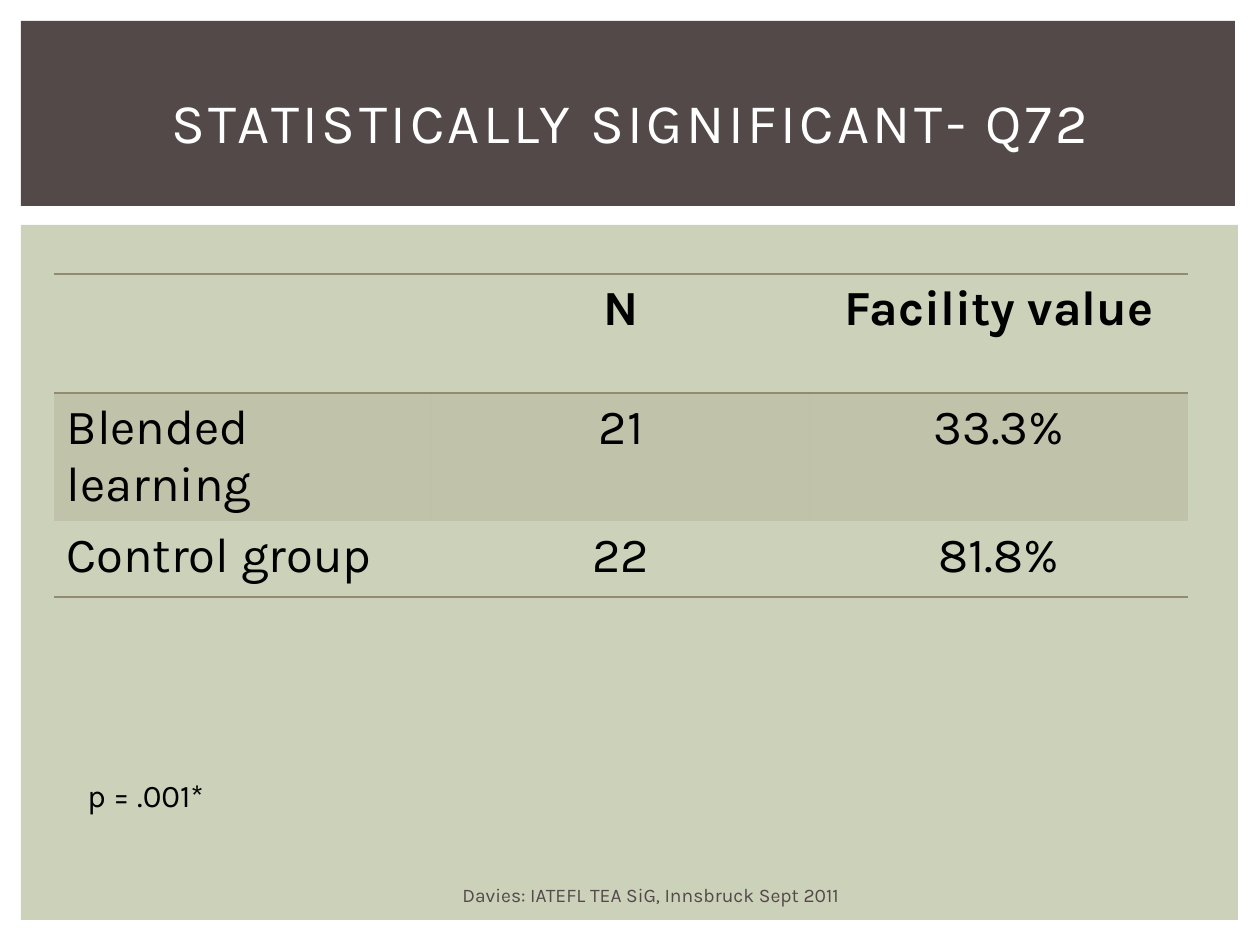
from lxml.etree import SubElement
from pptx import Presentation
from pptx.dml.color import RGBColor
from pptx.enum.shapes import MSO_SHAPE as Shape
from pptx.enum.text import MSO_ANCHOR as Anchor, MSO_AUTO_SIZE as AutoSize, PP_ALIGN as Align
from pptx.oxml.ns import qn
from pptx.util import Emu, Pt

PX = 914400 // 126
FONT = "Karla"
SAGE = RGBColor(0xCC, 0xD1, 0xB9)
BROWN = RGBColor(0x53, 0x49, 0x49)
OLIVE = RGBColor(0x92, 0x8B, 0x70)
WHITE = RGBColor(0xFF, 0xFF, 0xFF)
BLACK = RGBColor(0, 0, 0)
NO_STYLE = "{2D5ABB26-0587-4C30-8999-92F81FD0307C}"
RESULTS = [
    ("", "N", "Facility value"),
    ("Blended learning", "21", "33.3%"),
    ("Control group", "22", "81.8%"),
]
ROW_HEIGHTS = [119, 128, 76]
COLUMN_WIDTH = 378


def px(*lengths):
    return [Emu(length * PX) for length in lengths]


def add_panel(slide, box, color):
    panel = slide.shapes.add_shape(Shape.RECTANGLE, *px(*box))
    panel.shadow.inherit = False
    panel.fill.solid()
    panel.fill.fore_color.rgb = color
    panel.line.fill.background()


def write(paragraph, text, size, color, align=Align.LEFT, bold=False):
    paragraph.alignment = align
    run = paragraph.add_run()
    run.text = text
    run.font.name = FONT
    run.font.size = Pt(size)
    run.font.bold = bold
    run.font.color.rgb = color
    return run


def add_text(slide, box, text, size, color, align=Align.LEFT, anchor=Anchor.MIDDLE):
    frame = slide.shapes.add_textbox(*px(*box)).text_frame
    frame.word_wrap = True
    frame.auto_size = AutoSize.NONE
    frame.vertical_anchor = anchor
    return write(frame.paragraphs[0], text, size, color, align)


def add_rule(cell, side):
    rule = SubElement(cell._tc.get_or_add_tcPr(), qn(f"a:{side}"), w=str(Pt(1)))
    fill = SubElement(rule, qn("a:solidFill"))
    SubElement(fill, qn("a:srgbClr"), val=str(OLIVE))


def shade(cell):
    cell.fill.solid()
    cell.fill.fore_color.rgb = OLIVE
    color = cell._tc.tcPr.find(qn("a:solidFill")).find(qn("a:srgbClr"))
    SubElement(color, qn("a:alpha"), val="20000")


def add_results(slide, left, top):
    columns = len(RESULTS[0])
    box = px(left, top, columns * COLUMN_WIDTH, sum(ROW_HEIGHTS))
    table = slide.shapes.add_table(len(RESULTS), columns, *box).table
    table.horz_banding = False
    table._tbl.tblPr.find(qn("a:tableStyleId")).text = NO_STYLE
    for row, height in zip(table.rows, ROW_HEIGHTS):
        row.height = Emu(height * PX)
    rules = [("lnT", "lnB"), (), ("lnB",)]
    for r, values in enumerate(RESULTS):
        for c, value in enumerate(values):
            cell = table.cell(r, c)
            for side in rules[r]:
                add_rule(cell, side)
            if r == 1:
                shade(cell)
            else:
                cell.fill.background()
            if value:
                align = Align.CENTER if c else Align.LEFT
                write(cell.text_frame.paragraphs[0], value, 28, BLACK, align, bold=r == 0)


def main():
    deck = Presentation()
    deck.slide_width, deck.slide_height = px(1260, 945)
    slide = deck.slides.add_slide(deck.slide_layouts[6])
    slide.background.fill.solid()
    slide.background.fill.fore_color.rgb = WHITE

    add_panel(slide, (21, 225, 1217, 695), SAGE)
    add_panel(slide, (21, 21, 1214, 185), BROWN)
    add_results(slide, 54, 274)
    add_text(slide, (420, 876, 462, 38), "Davies: IATEFL TEA SiG, Innsbruck Sept 2011",
             11, BROWN, Align.CENTER)
    title = add_text(slide, (53, 49, 1155, 145), "STATISTICALLY SIGNIFICANT- Q72",
                     32, WHITE, Align.CENTER)
    title.font._element.set("spc", "200")
    add_text(slide, (75, 770, 367, 50), "p = .001*", 18, BLACK, anchor=Anchor.TOP)
    deck.save("out.pptx")


if __name__ == "__main__":
    main()
